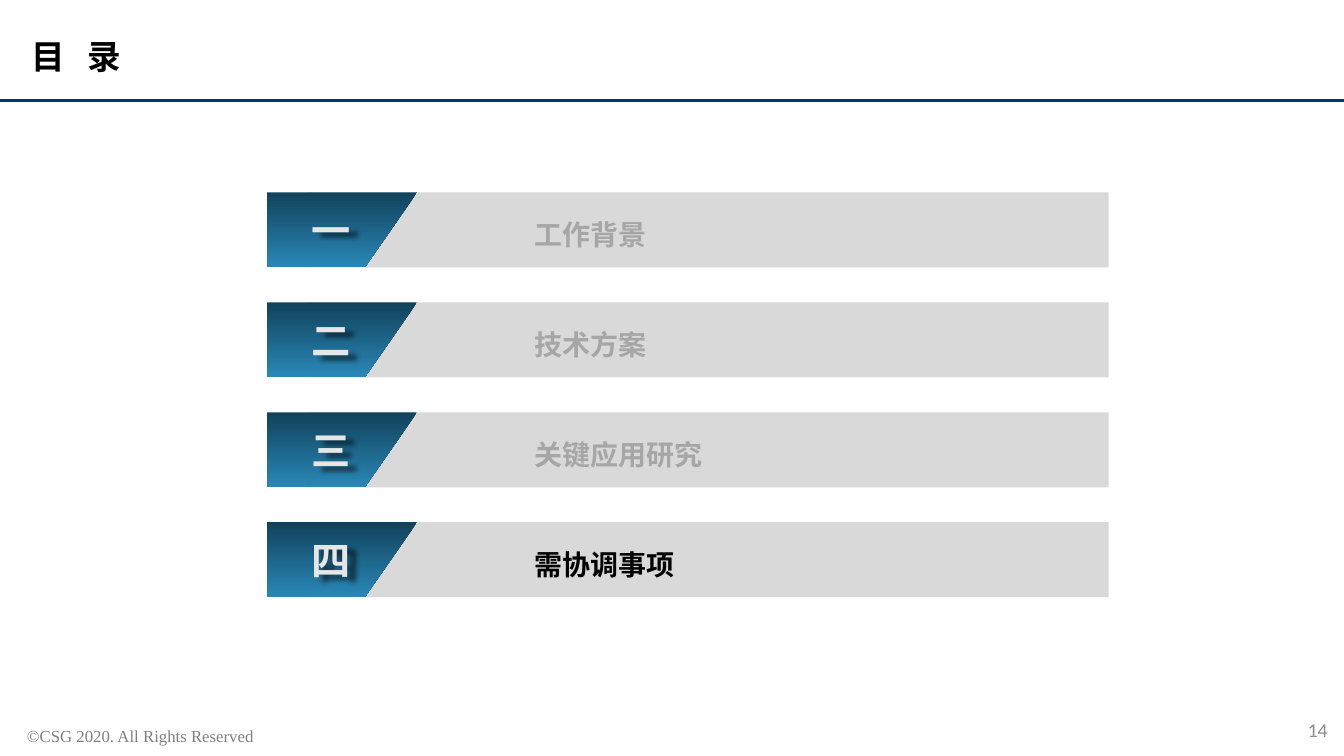
from lxml.etree import SubElement
from pptx import Presentation
from pptx.dml.color import RGBColor
from pptx.enum.shapes import MSO_CONNECTOR, MSO_SHAPE
from pptx.enum.text import MSO_ANCHOR, PP_ALIGN
from pptx.oxml.ns import qn
from pptx.util import Cm, Pt

TITLE = "目 录"
FOOTER = "©CSG 2020. All Rights Reserved"
PAGE = "14"
SECTIONS = [
    ("一", "工作背景", "A6A6A6"),
    ("二", "技术方案", "A6A6A6"),
    ("三", "关键应用研究", "A6A6A6"),
    ("四", "需协调事项", "000000"),
]
CJK = "Noto Sans CJK SC"
WIDTH, HEIGHT = 33.87, 19.05
FIRST_TOP, PITCH, BAR_HEIGHT = 4.85, 2.77, 1.89
TAB_LEFT, TAB_TOP_WIDTH, TAB_BOTTOM_WIDTH = 6.73, 3.78, 2.46


def color(value):
    return RGBColor.from_string(value)


def add_text(text, left, top, width, height, size, font, hue, bold=False,
             align=PP_ALIGN.LEFT, spacing=1.0):
    sp = s.shapes.add_textbox(Cm(left), Cm(top), Cm(width), Cm(height))
    tf = sp.text_frame
    tf.word_wrap = True
    tf.text = text
    p = tf.paragraphs[0]
    p.alignment = align
    p.line_spacing = spacing
    r = p.runs[0]
    r.font.size, r.font.name, r.font.bold = Pt(size), font, bold
    r.font.color.rgb = color(hue)
    SubElement(r.font._element, qn("a:ea"), typeface=font)
    return sp


def add_bar(top):
    sp = s.shapes.add_shape(MSO_SHAPE.RECTANGLE, Cm(7.75), Cm(top), Cm(20.19), Cm(BAR_HEIGHT))
    sp.shadow.inherit = False
    sp.fill.solid()
    sp.fill.fore_color.rgb = color("D9D9D9")
    sp.line.fill.background()


def add_tab(top):
    bottom = top + BAR_HEIGHT
    outline = s.shapes.build_freeform(Cm(TAB_LEFT), Cm(top))
    outline.add_line_segments([
        (Cm(TAB_LEFT), Cm(bottom)),
        (Cm(TAB_LEFT + TAB_BOTTOM_WIDTH), Cm(bottom)),
        (Cm(TAB_LEFT + TAB_TOP_WIDTH), Cm(top)),
    ])
    sp = outline.convert_to_shape()
    sp.shadow.inherit = False
    sp.line.fill.background()
    sp.fill.gradient()
    sp.fill.gradient_angle = 270
    for stop, position, hue in zip(sp.fill.gradient_stops, (0, 1), ("11425C", "2988B7")):
        stop.position = position
        stop.color.rgb = color(hue)


def add_shadow(sp):
    effects = SubElement(sp._element.spPr, qn("a:effectLst"))
    shadow = SubElement(effects, qn("a:outerShdw"), blurRad="50800", dist="76200",
                        dir="1800000", algn="tl", rotWithShape="0")
    black = SubElement(shadow, qn("a:srgbClr"), val="000000")
    SubElement(black, qn("a:alpha"), val="60000")


prs = Presentation()
prs.slide_width, prs.slide_height = Cm(WIDTH), Cm(HEIGHT)
s = prs.slides.add_slide(prs.slide_layouts[6])

add_text(FOOTER, 0.43, 18.16, 13, 0.76, 12, "Times New Roman", "808080")

rule = s.shapes.add_connector(MSO_CONNECTOR.STRAIGHT, 0, Cm(2.53), Cm(WIDTH), Cm(2.53))
rule.line.color.rgb = color("003679")
rule.line.width = Pt(2.25)
SubElement(rule._element.spPr, qn("a:effectLst"))

title = add_text(TITLE, 0.79, 1.02, 13.21, 0.91, 24, CJK, "000000", True, spacing=0.9)
tf = title.text_frame
tf.margin_left = tf.margin_right = tf.margin_top = tf.margin_bottom = 0
tf.paragraphs[0].runs[0].font._element.set("spc", "540")

page = add_text(PAGE, 26.09, 17.88, 7.62, 1.02, 14, "Calibri", "8C8C8C", align=PP_ALIGN.RIGHT)
page.text_frame.vertical_anchor = MSO_ANCHOR.MIDDLE

for i, (numeral, label, hue) in enumerate(SECTIONS):
    top = FIRST_TOP + i * PITCH
    add_bar(top)
    add_tab(top)
    add_shadow(add_text(numeral, 7.37, top + 0.36, 1.96, 1.32, 28, CJK, "E6E6E6", True,
                        PP_ALIGN.CENTER, 0.9))
    add_text(label, 13.21, top + 0.5, 13.21, 1.12, 20, CJK, hue, True)

prs.save("out.pptx")
